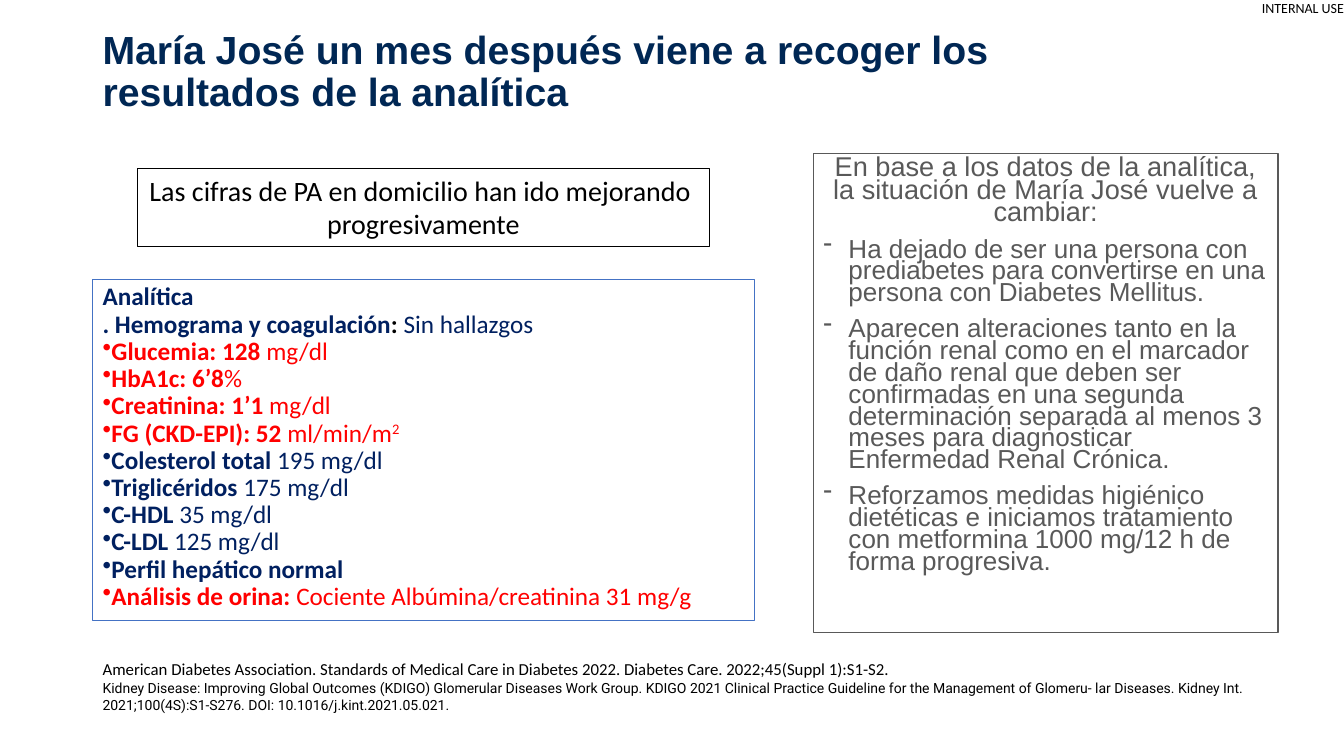
from dataclasses import dataclass

from lxml import etree
from pptx import Presentation
from pptx.dml.color import RGBColor
from pptx.enum.shapes import MSO_SHAPE
from pptx.enum.text import MSO_ANCHOR, PP_ALIGN
from pptx.oxml.ns import qn
from pptx.util import Pt

RECTANGLE = MSO_SHAPE.RECTANGLE
TOP, MIDDLE = MSO_ANCHOR.TOP, MSO_ANCHOR.MIDDLE
LEFT, CENTER, JUSTIFY = PP_ALIGN.LEFT, PP_ALIGN.CENTER, PP_ALIGN.JUSTIFY


@dataclass(frozen=True)
class Theme:
    heading_font: str = "Arial"
    body_font: str = "Calibri"
    reference_font: str = "Roboto"
    title_color: str = "002754"
    navy: str = "002060"
    red: str = "FF0000"
    grey: str = "595959"
    black: str = "000000"
    blue: str = "4472C4"
    title_size: float = 28
    message_size: float = 20
    intro_size: float = 19.4
    point_size: float = 18.6
    lab_size: float = 18
    source_size: float = 12
    small_size: float = 10


class SlideBuilder:
    def __init__(self, presentation, theme):
        self.theme = theme
        self.slide = presentation.slides.add_slide(presentation.slide_layouts[6])

    def text_box(self, left, top, width, height, anchor=TOP, margin=None, wrap=True):
        shape = self.slide.shapes.add_textbox(Pt(left), Pt(top), Pt(width), Pt(height))
        return self.prepare_frame(shape, anchor, margin, wrap)

    def framed_box(self, left, top, width, height, color, weight, wrap=True):
        shape = self.slide.shapes.add_shape(
            RECTANGLE, Pt(left), Pt(top), Pt(width), Pt(height))
        shape.shadow.inherit = False
        shape.fill.background()
        shape.line.color.rgb = RGBColor.from_string(color)
        shape.line.width = Pt(weight)
        return self.prepare_frame(shape, TOP, None, wrap)

    def prepare_frame(self, shape, anchor, margin, wrap):
        frame = shape.text_frame
        frame.word_wrap = wrap
        frame.vertical_anchor = anchor
        if margin is not None:
            for side in ("left", "top", "right", "bottom"):
                setattr(frame, f"margin_{side}", Pt(margin))
        return frame

    def paragraph(self, frame, runs, style, bullet=None, indent=0, **layout):
        """Each run is a text with the font values that differ from the style."""
        first = not frame.paragraphs[0].runs
        paragraph = frame.paragraphs[0] if first else frame.add_paragraph()
        if bullet:
            properties = paragraph._p.get_or_add_pPr()
            properties.set("marL", str(Pt(indent)))
            properties.set("indent", str(-Pt(indent)))
            etree.SubElement(properties, qn("a:buChar")).set("char", bullet)
        if first:
            layout.pop("space_before", None)
        for name, value in layout.items():
            setattr(paragraph, name, value)
        for text, changes in runs:
            self.run(paragraph, text, {**style, **changes})

    def run(self, paragraph, text, values):
        run = paragraph.add_run()
        run.text = text
        values = dict(values)
        run.font.color.rgb = RGBColor.from_string(values.pop("color"))
        if values.pop("superscript", False):
            run._r.get_or_add_rPr().set("baseline", "30000")
        values["size"] = Pt(values["size"])
        for name, value in values.items():
            setattr(run.font, name, value)


def main():
    presentation = Presentation()
    presentation.slide_width, presentation.slide_height = Pt(960), Pt(540)
    theme = Theme()
    builder = SlideBuilder(presentation, theme)

    # Classification label
    label = builder.text_box(901.4, 0, 61.2, 12.2, margin=0, wrap=False)
    small = {"name": theme.body_font, "size": theme.small_size, "color": theme.black}
    builder.paragraph(label, [("INTERNAL USE", {})], small, alignment=LEFT)

    # Title
    title = builder.text_box(66.2, 28.8, 707, 46.1, anchor=MIDDLE)
    title_style = {"name": theme.heading_font, "size": theme.title_size,
                   "color": theme.title_color, "bold": True}
    builder.paragraph(
        title,
        [("María José un mes después viene a recoger los resultados de la analítica", {})],
        title_style, line_spacing=0.9)

    # Conclusions on the right
    conclusions = builder.framed_box(581, 109.4, 331.9, 342.7, theme.grey, 0.75)
    intro = {"name": theme.heading_font, "size": theme.intro_size, "color": theme.grey}
    spacing = {"line_spacing": 0.7, "space_before": Pt(10)}
    builder.paragraph(
        conclusions,
        [("En base a los datos de la analítica, la situación de María José vuelve a cambiar:", {})],
        intro, alignment=CENTER, **spacing)
    for point in (
        "Ha dejado de ser una persona con prediabetes para convertirse en una persona "
        "con Diabetes Mellitus.",
        "Aparecen alteraciones tanto en la función renal como en el marcador de daño renal "
        "que deben ser confirmadas en una segunda determinación separada al menos 3 meses "
        "para diagnosticar Enfermedad Renal Crónica.",
        "Reforzamos medidas higiénico dietéticas e iniciamos tratamiento con metformina "
        "1000 mg/12 h de forma progresiva.",
    ):
        builder.paragraph(conclusions, [(point, {"size": theme.point_size})], intro,
                          bullet="-", indent=18, alignment=LEFT, **spacing)

    # Laboratory results
    results = builder.framed_box(66.2, 199.4, 473, 244.1, theme.blue, 0.75)
    lab = {"name": theme.body_font, "size": theme.lab_size, "color": theme.navy}
    strong = {"bold": True}
    lab_layout = {"alignment": JUSTIFY, "line_spacing": 0.9}
    builder.paragraph(results, [("Analítica ", strong)], lab, **lab_layout)
    builder.paragraph(
        results,
        [(". Hemograma y coagulación", strong),
         (": ", {"bold": True, "color": theme.black}),
         ("Sin hallazgos", {})],
        lab, **lab_layout)
    for color, name, value, exponent in (
        (theme.red, "Glucemia: 128 ", "mg/dl", ""),
        (theme.red, "HbA1c: 6’8", "%", ""),
        (theme.red, "Creatinina: 1’1", " mg/dl", ""),
        (theme.red, "FG (CKD-EPI): 52", " ml/min/m", "2 "),
        (theme.navy, "Colesterol total ", "195 mg/dl", ""),
        (theme.navy, "Triglicéridos ", "175 mg/dl", ""),
        (theme.navy, "C-HDL ", "35 mg/dl", ""),
        (theme.navy, "C-LDL ", "125 mg/dl", ""),
        (theme.navy, "Perfil hepático normal", "", ""),
        (theme.red, "Análisis de orina: ", "Cociente Albúmina/creatinina 31 mg/g", ""),
    ):
        parts = ((name, strong), (value, {}), (exponent, {"superscript": True}))
        runs = [part for part in parts if part[0]]
        builder.paragraph(results, runs, {**lab, "color": color}, bullet="•", **lab_layout)

    # Blood pressure message
    message = builder.framed_box(97.9, 120.2, 409, 55.4, theme.black, 0.25, wrap=False)
    message_style = {"name": theme.body_font, "size": theme.message_size,
                     "color": theme.black}
    for line in ("Las cifras de PA en domicilio han ido mejorando ", "progresivamente"):
        builder.paragraph(message, [(line, {})], message_style, alignment=CENTER)

    # References
    references = builder.text_box(66.2, 467.3, 856.1, 46.1)
    builder.paragraph(
        references,
        [("American Diabetes Association. Standards of Medical Care in Diabetes 2022. "
          "Diabetes Care. 2022;45(Suppl 1):S1-S2.", {"size": theme.source_size})],
        small)
    builder.paragraph(
        references,
        [("Kidney Disease: Improving Global Outcomes (KDIGO) Glomerular Diseases Work Group. "
          "KDIGO 2021 Clinical Practice Guideline for the Management of Glomeru- lar Diseases. "
          "Kidney Int. 2021;100(4S):S1-S276. DOI: 10.1016/j.kint.2021.05.021.",
          {"name": theme.reference_font})],
        small)

    presentation.save("out.pptx")


if __name__ == "__main__":
    main()
